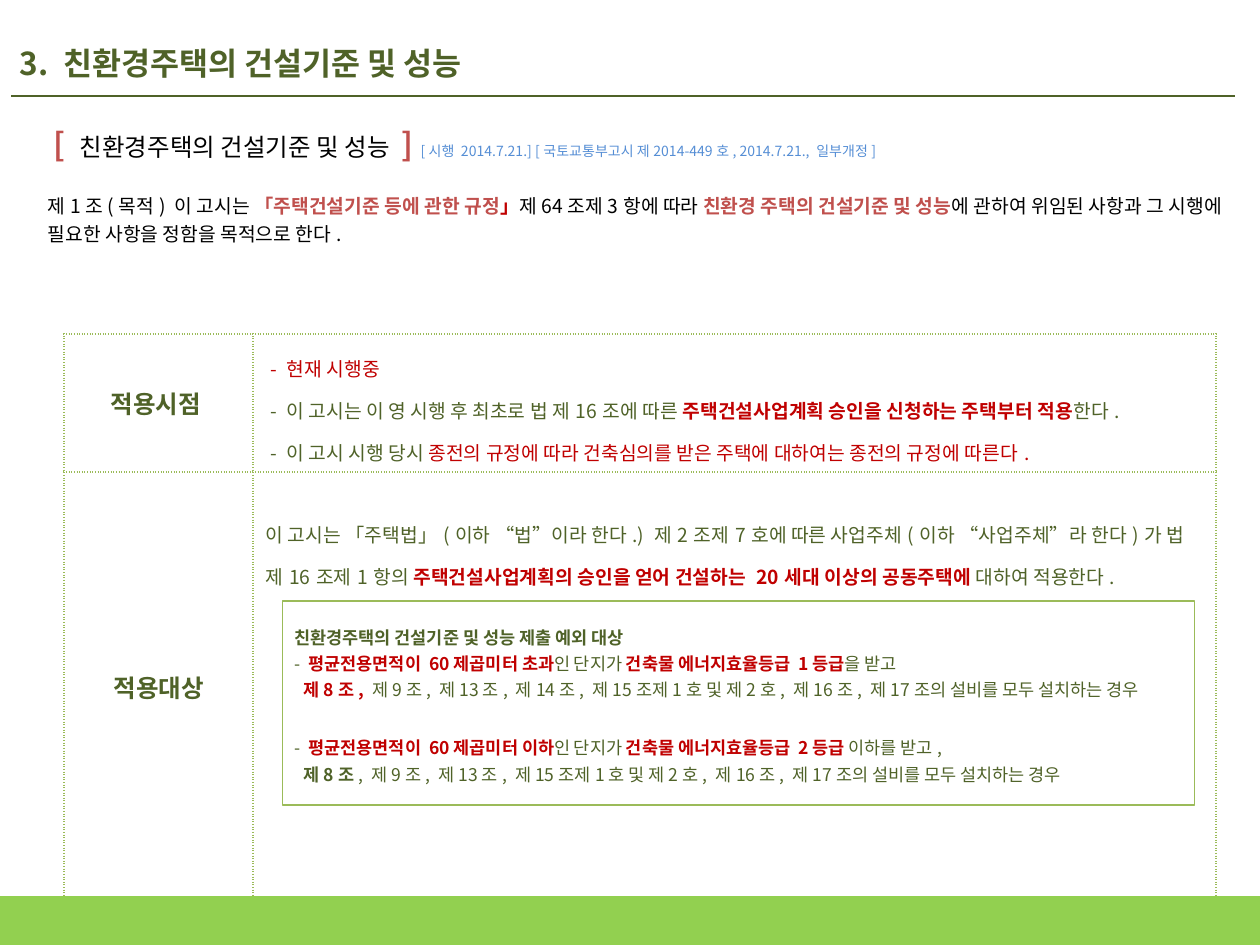
from dataclasses import dataclass

from lxml import etree
from pptx import Presentation
from pptx.dml.color import RGBColor
from pptx.enum.shapes import MSO_CONNECTOR, MSO_SHAPE
from pptx.enum.text import MSO_ANCHOR, PP_ALIGN
from pptx.oxml.ns import qn
from pptx.util import Inches, Pt

RECTANGLE = MSO_SHAPE.RECTANGLE
STRAIGHT = MSO_CONNECTOR.STRAIGHT
LEFT, CENTER = PP_ALIGN.LEFT, PP_ALIGN.CENTER
TOP, MIDDLE = MSO_ANCHOR.TOP, MSO_ANCHOR.MIDDLE


@dataclass(frozen=True)
class Theme:
    font: str = "Noto Sans CJK KR"
    black: str = "000000"
    green: str = "4F6228"
    border: str = "9BBB59"
    band: str = "92D050"
    red: str = "C00000"
    coral: str = "C0504D"
    blue: str = "558ED5"
    title: int = 18
    heading: int = 14
    body: int = 11
    detail: int = 10
    note: int = 8


THEME = Theme()


def color(value):
    return RGBColor.from_string(value)


def plain(text):
    return text, {}


def strong(text, tint=THEME.red):
    return text, {"tint": tint, "bold": True}


def write(frame, runs, size=THEME.body, tint=THEME.green, bold=False, align=LEFT,
          line_spacing=1.0, space_before=0, indent=0):
    """Add one paragraph; each run is (text, overrides of size, tint, bold)."""
    paragraph = frame.paragraphs[0]
    if paragraph.runs:
        paragraph = frame.add_paragraph()
    paragraph.alignment = align
    paragraph.line_spacing = line_spacing
    paragraph.space_before = Pt(space_before)
    if indent:
        paragraph._p.get_or_add_pPr().set("marL", str(Inches(indent)))
    for text, changes in runs:
        style = {"size": size, "tint": tint, "bold": bold, **changes}
        run = paragraph.add_run()
        run.text = text
        run.font.name = THEME.font
        run.font.size = Pt(style["size"])
        run.font.bold = style["bold"]
        run.font.color.rgb = color(style["tint"])
        east_asian = etree.SubElement(run._r.get_or_add_rPr(), qn("a:ea"))
        east_asian.set("typeface", THEME.font)


def add_text_box(slide, box):
    frame = slide.shapes.add_textbox(*map(Inches, box)).text_frame
    frame.word_wrap = True
    frame.margin_top = 0
    return frame


def add_rectangle(slide, box, line, width, fill=None):
    shape = slide.shapes.add_shape(RECTANGLE, *map(Inches, box))
    shape.shadow.inherit = False
    if fill:
        shape.fill.solid()
        shape.fill.fore_color.rgb = color(fill)
    else:
        shape.fill.background()
    shape.line.color.rgb = color(line)
    shape.line.width = Pt(width)
    return shape


def style_cell(cell, anchor):
    """Dotted border on all sides and no fill."""
    properties = cell._tc.get_or_add_tcPr()
    for side in ("lnL", "lnR", "lnT", "lnB"):
        line = etree.SubElement(properties, qn(f"a:{side}"), w=str(Pt(1)))
        fill = etree.SubElement(line, qn("a:solidFill"))
        etree.SubElement(fill, qn("a:srgbClr"), val=THEME.border)
        etree.SubElement(line, qn("a:prstDash"), val="sysDot")
    cell.fill.background()
    cell.vertical_anchor = anchor


def add_title(slide, box):
    left, top, width, height = box
    write(add_text_box(slide, box), [plain("3. 친환경주택의 건설기준 및 성능")],
          size=THEME.title, bold=True)
    rule_y = Inches(top + height + 0.01)
    rule = slide.shapes.add_connector(
        STRAIGHT, Inches(left + 0.03), rule_y, Inches(left + width), rule_y)
    rule.line.color.rgb = color(THEME.green)
    rule.line.width = Pt(1.25)
    etree.SubElement(rule._element.spPr, qn("a:effectLst"))


def add_introduction(slide, box):
    frame = add_text_box(slide, box)
    bracket = {"size": THEME.title, "tint": THEME.coral, "bold": True}
    write(frame, [
        plain(" "), ("[ ", bracket), plain("친환경주택의 건설기준 및 성능 "), ("] ", bracket),
        ("[시행 2014.7.21.] [국토교통부고시 제2014-449호, 2014.7.21., 일부개정]",
         {"size": THEME.note, "tint": THEME.blue}),
    ], size=THEME.heading, tint=THEME.black)
    write(frame, [
        plain("제1조(목적) 이 고시는 "),
        strong("「주택건설기준 등에 관한 규정", THEME.coral), strong("」"),
        plain("제64조제3항에 따라 "),
        strong("친환경 주택의 건설기준 및 성능", THEME.coral),
        plain("에 관하여 위임된 사항과 그 시행에 필요한 사항을 정함을 목적으로 한다."),
    ], tint=THEME.black, line_spacing=1.22, space_before=15)


def add_scope_table(slide, box):
    table = slide.shapes.add_table(2, 2, *map(Inches, box)).table
    table.first_row = table.horz_banding = False
    for column, width in zip(table.columns, (1.5, 7.64)):
        column.width = Inches(width)
    for row, height in zip(table.rows, (0.84, 3.41)):
        row.height = Inches(height)

    rows = [
        ("적용시점 ", MIDDLE, [
            [(" - 현재 시행중", {"tint": THEME.red})],
            [plain(" - 이 고시는 이 영 시행 후 최초로 법 제16조에 따른 "),
             strong("주택건설사업계획 승인을 신청하는 주택부터 적용"), plain("한다.")],
            [plain(" - 이 고시 시행 당시 "),
             ("종전의 규정에 따라 건축심의를 받은 주택에 대하여는 종전의 규정에 따른다.",
              {"tint": THEME.red})],
        ]),
        ("적용대상", TOP, [
            [plain("이 고시는 「주택법」(이하 “법”이라 한다.) 제2조제7호에 따른 "
                   "사업주체(이하 “사업주체”라 한다)가 법 제16조제1항의 "),
             strong("주택건설사업계획의 승인을 얻어 건설하는 20세대 이상의 공동주택에 "),
             plain("대하여 적용한다.")],
        ]),
    ]
    for index, (label, anchor, paragraphs) in enumerate(rows):
        label_cell, content_cell = table.cell(index, 0), table.cell(index, 1)
        style_cell(label_cell, MIDDLE)
        style_cell(content_cell, anchor)
        write(label_cell.text_frame, [plain(label)], size=THEME.heading, bold=True,
              align=CENTER)
        for runs in paragraphs:
            write(content_cell.text_frame, runs, line_spacing=1.5)
    table.cell(1, 1).margin_top = Inches(0.27)


def add_exceptions(slide, box):
    frame = add_rectangle(slide, box, THEME.border, 0.75).text_frame
    frame.word_wrap = True
    frame.vertical_anchor = MIDDLE
    style = {"size": THEME.detail, "line_spacing": 1.25}
    write(frame, [strong("친환경주택의 건설기준 및 성능 제출 예외 대상", THEME.green)], **style)
    cases = [
        ("초과", "1등급", "을 받고", strong("제8조, "), "제9조, 제13조, 제14조, ", 0),
        ("이하", "2등급 ", "이하를 받고,", strong("제8조", THEME.green),
         ", 제9조, 제13조, ", 18),
    ]
    for limit, grade, ending, first_article, articles, gap in cases:
        write(frame, [
            plain("- "), strong(f"평균전용면적이 60제곱미터 {limit}"), plain("인 단지가 "),
            strong(f"건축물 에너지효율등급 {grade}"), plain(ending),
        ], space_before=gap, **style)
        write(frame, [
            first_article,
            plain(f"{articles}제15조제1호 및 제2호, 제16조, 제17조의 설비를 모두 설치하는 경우"),
        ], indent=0.07, **style)


def main():
    presentation = Presentation()
    presentation.slide_width, presentation.slide_height = Inches(10), Inches(7.5)
    slide = presentation.slides.add_slide(presentation.slide_layouts[6])
    add_scope_table(slide, (0.51, 2.65, 9.14, 4.25))
    # Footer band
    add_rectangle(slide, (0, 7.12, 10, 0.38), THEME.band, 1, fill=THEME.band)
    add_introduction(slide, (0.28, 0.99, 9.61, 1.41))
    add_title(slide, (0.06, 0.35, 9.74, 0.4))
    add_exceptions(slide, (2.24, 4.77, 7.24, 1.62))
    presentation.save("out.pptx")


if __name__ == "__main__":
    main()
